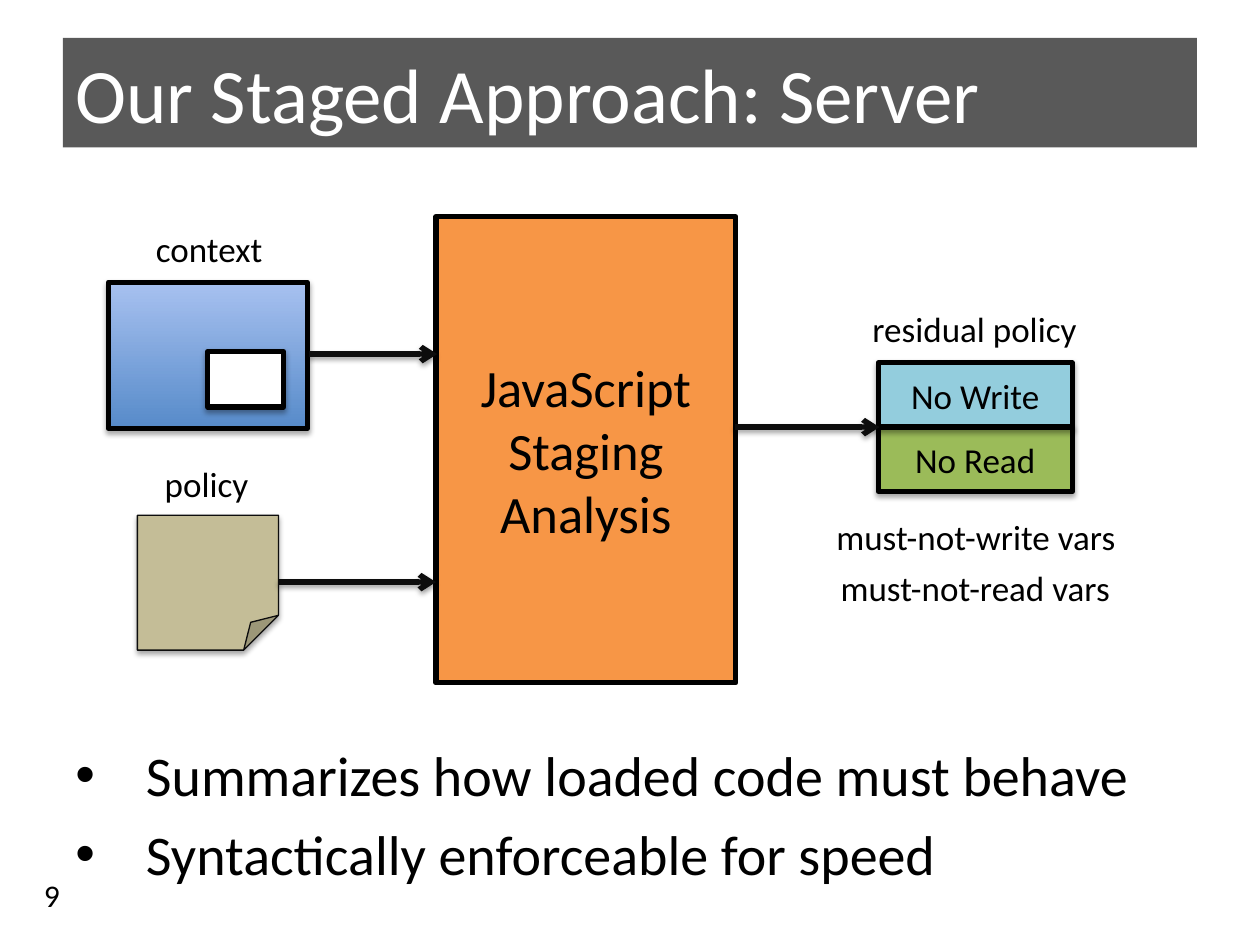
"""Build the slide on the server side of the staged approach."""
import lxml.etree
import pptx
import pptx.dml.color
import pptx.enum.shapes
import pptx.enum.text
import pptx.oxml.ns
import pptx.util

Inches = pptx.util.Inches
Pt = pptx.util.Pt
RGB = pptx.dml.color.RGBColor.from_string
qn = pptx.oxml.ns.qn
SubElement = lxml.etree.SubElement
ANCHOR = pptx.enum.text.MSO_ANCHOR
ALIGN = pptx.enum.text.PP_ALIGN
PRESET = pptx.enum.shapes.MSO_SHAPE

COLORS = {
    "black": "000000",
    "white": "FFFFFF",
    "banner": "595959",
    "ink": "0D0D0D",
    "context_low": "3F80CE",
    "context_high": "A4C4FF",
    "policy": "C4BD97",
    "analysis": "F79646",
    "write": "93CDDD",
    "read": "9BBB59",
}


def write_text(holder, *lines, size=20, color="black", align=ALIGN.CENTER,
               anchor=ANCHOR.MIDDLE, bullet=None, before=0):
    frame = holder.text_frame
    frame.word_wrap = True
    frame.vertical_anchor = anchor
    for index, line in enumerate(lines):
        paragraph = frame.add_paragraph() if index else frame.paragraphs[0]
        paragraph.text = line
        paragraph.alignment = align
        paragraph.space_before = Pt(before)
        for run in paragraph.runs:
            run.font.size = Pt(size)
            run.font.name = "Calibri"
            run.font.color.rgb = RGB(COLORS[color])
        if bullet:
            props = paragraph._p.get_or_add_pPr()
            props.set("marL", str(Inches(0.56)))
            props.set("indent", str(-Inches(0.56)))
            SubElement(props, qn("a:buFont"), typeface="Arial")
            SubElement(props, qn("a:buChar"), char=bullet)


def cast_shadow(item, opacity, distance):
    properties = item.element.spPr
    effects = properties.find(qn("a:effectLst"))
    if effects is None:
        effects = SubElement(properties, qn("a:effectLst"))
    shadow = SubElement(effects, qn("a:outerShdw"), blurRad=str(Pt(3.1)),
                        dist=str(Pt(distance)), dir="5400000", rotWithShape="0")
    tone = SubElement(shadow, qn("a:srgbClr"), val=COLORS["black"])
    SubElement(tone, qn("a:alpha"), val=str(opacity * 1000))


deck = pptx.Presentation()
deck.slide_width = Inches(10)
deck.slide_height = Inches(7.5)
slide = deck.slides.add_slide(deck.slide_layouts[6])
shapes = slide.shapes

points = shapes.add_textbox(Inches(0.5), Inches(5.83), Inches(9), Inches(1.33))
write_text(points, "Summarizes how loaded code must behave",
           "Syntactically enforceable for speed", size=32, align=ALIGN.LEFT,
           anchor=ANCHOR.TOP, bullet="•", before=6.4)

boxes = {}
for part, preset, left, top, width, height, fill, edge, weight, shaded in [
    ("title", PRESET.RECTANGLE, 0.5, 0.3, 9, 0.87, "banner", None, 0, False),
    ("context", PRESET.RECTANGLE, 0.86, 2.24, 1.58, 1.16, None, "black", 3, True),
    ("code", PRESET.RECTANGLE, 1.65, 2.79, 0.6, 0.44, "white", "black", 3, True),
    ("policy", PRESET.FOLDED_CORNER, 1.09, 4.09, 1.12, 1.07, "policy", "ink", 0.75, True),
    ("analysis", PRESET.RECTANGLE, 3.46, 1.72, 2.38, 3.7, "analysis", "black", 3, False),
    ("read", PRESET.RECTANGLE, 6.97, 3.39, 1.54, 0.51, "read", "black", 3, True),
    ("write", PRESET.RECTANGLE, 6.97, 2.88, 1.54, 0.51, "write", "black", 3, True),
]:
    box = shapes.add_shape(preset, Inches(left), Inches(top), Inches(width), Inches(height))
    box.shadow.inherit = False
    if fill:
        box.fill.solid()
        box.fill.fore_color.rgb = RGB(COLORS[fill])
    if edge:
        box.line.color.rgb = RGB(COLORS[edge])
        box.line.width = Pt(weight)
    else:
        box.line.fill.background()
    if shaded:
        cast_shadow(box, 35, 1.8)
    boxes[part] = box

fold = next(boxes["policy"].element.spPr.iter(qn("a:avLst")))
SubElement(fold, qn("a:gd"), name="adj", fmla="val 25800")
context_fill = boxes["context"].fill
context_fill.gradient()
context_fill.gradient_angle = 90
for stop, position, shade in zip(context_fill.gradient_stops, (0, 1),
                                 ("context_low", "context_high")):
    stop.position = position
    stop.color.rgb = RGB(COLORS[shade])
for tone in boxes["context"].element.spPr.find(qn("a:gradFill")).iter(qn("a:srgbClr")):
    SubElement(tone, qn("a:alpha"), val="80000")

write_text(boxes["title"], "Our Staged Approach: Server", size=44, color="white",
           align=ALIGN.LEFT)
write_text(boxes["analysis"], "JavaScript", "Staging\nAnalysis", size=30)
write_text(boxes["read"], "No Read")
write_text(boxes["write"], "No Write")

for label, left, top, width, height, anchor in [
    ("context", 0.86, 1.72, 1.6, 0.51, ANCHOR.MIDDLE),
    ("policy", 0.84, 3.58, 1.6, 0.51, ANCHOR.MIDDLE),
    ("residual policy", 6.81, 2.39, 1.85, 0.44, ANCHOR.TOP),
    ("must-not-read vars", 6.53, 4.41, 2.42, 0.51, ANCHOR.MIDDLE),
    ("must-not-write vars", 6.32, 4, 2.85, 0.51, ANCHOR.MIDDLE),
]:
    caption = shapes.add_textbox(Inches(left), Inches(top), Inches(width), Inches(height))
    write_text(caption, label, anchor=anchor)

for start, end, level in [(2.45, 3.47, 2.81), (2.21, 3.46, 4.62), (5.83, 6.98, 3.39)]:
    flow = shapes.add_connector(pptx.enum.shapes.MSO_CONNECTOR.STRAIGHT,
                                Inches(start), Inches(level), Inches(end), Inches(level))
    flow.line.color.rgb = RGB(COLORS["ink"])
    flow.line.width = Pt(3)
    SubElement(flow.element.spPr.find(qn("a:ln")), qn("a:tailEnd"), type="arrow")
    cast_shadow(flow, 38, 1.6)

page_number = shapes.add_textbox(Inches(0.25), Inches(6.9), Inches(2.33), Inches(0.4))
write_text(page_number, "9", size=18, align=ALIGN.LEFT, anchor=ANCHOR.BOTTOM)

deck.save("out.pptx")
